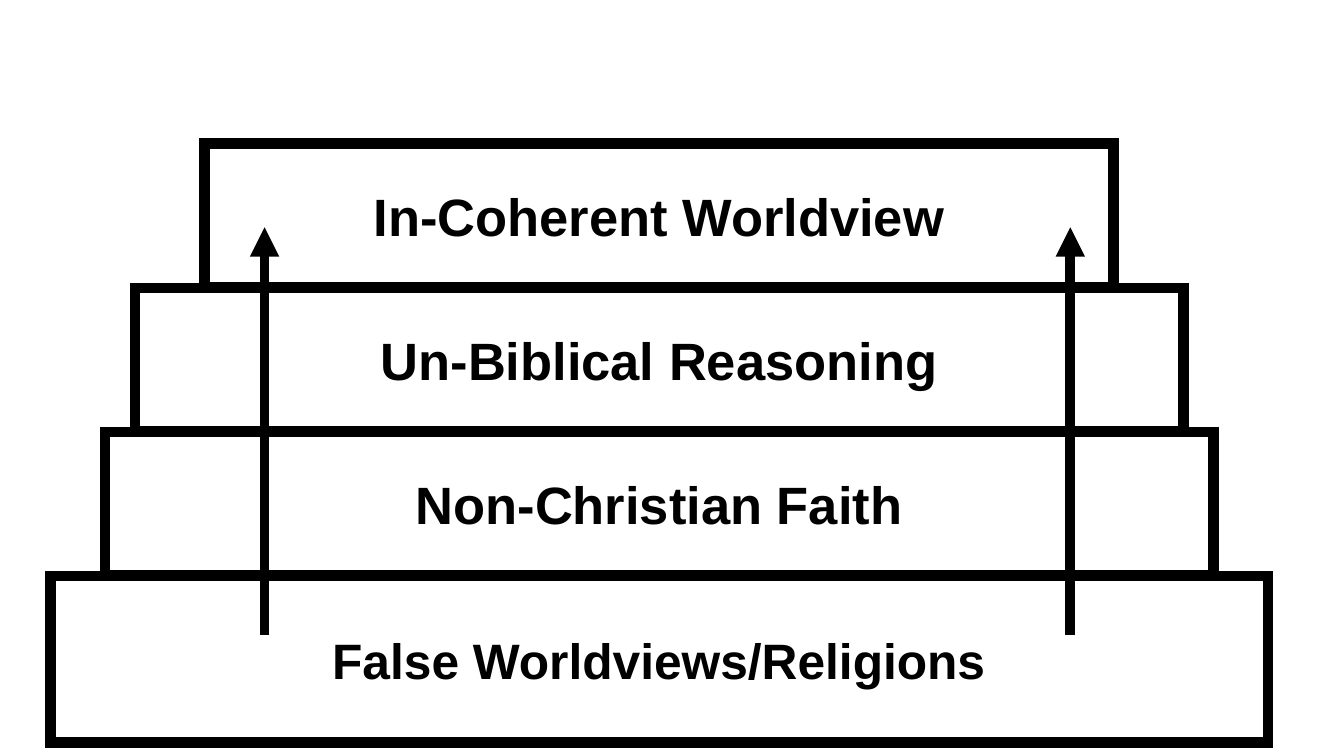
import pptx
import pptx.dml.color
import pptx.enum.shapes
import pptx.enum.text
import pptx.oxml.ns
import pptx.util
from lxml import etree
from pptx.util import Inches

BLACK = pptx.dml.color.RGBColor(0x00, 0x00, 0x00)
FONT = "Arial"
TIER_PITCH = 2.86
TIER_HEIGHT = 2.85
BASE_HEIGHT = 3.3
TIERS = [
    ("In-Coherent Worldview", 18.04, TIER_HEIGHT, 75),
    ("Un-Biblical Reasoning", 20.81, TIER_HEIGHT, 75),
    ("Non-Christian Faith", 22, TIER_HEIGHT, 75),
    ("False Worldviews/Religions", 24.16, BASE_HEIGHT, 71),
]
ARROW_OFFSETS = (4.25, 20.24)
ARROW_TOP = 1.66
ARROW_BOTTOM = 9.74


def add_xml(parent, tag, **attributes):
    return etree.SubElement(parent, pptx.oxml.ns.qn(tag), attributes)


def write_text(shape, text, size, bold=True, color=BLACK):
    frame = shape.text_frame
    frame.word_wrap = True
    frame.vertical_anchor = pptx.enum.text.MSO_ANCHOR.MIDDLE
    for side in ("left", "top", "right", "bottom"):
        setattr(frame, f"margin_{side}", Inches(0.06))
    para = frame.paragraphs[0]
    para.alignment = pptx.enum.text.PP_ALIGN.CENTER
    span = para.add_run()
    span.text = text
    span.font.name = FONT
    span.font.size = pptx.util.Pt(size)
    span.font.bold = bold
    span.font.color.rgb = color


def style_line(line, width):
    line.color.rgb = BLACK
    line.width = pptx.util.Pt(width)


def add_tier(page, left, top, width, height, text, size):
    box = page.shapes.add_shape(
        pptx.enum.shapes.MSO_SHAPE.RECTANGLE,
        Inches(left), Inches(top), Inches(width), Inches(height))
    box.shadow.inherit = False
    box.fill.background()
    style_line(box.line, 15)
    add_xml(box.line._get_or_add_ln(), "a:miter", lim="800000")
    write_text(box, text, size)


def add_up_arrow(page, x, bottom, top):
    arrow = page.shapes.add_connector(
        pptx.enum.shapes.MSO_CONNECTOR.STRAIGHT,
        Inches(x), Inches(bottom), Inches(x), Inches(top))
    style_line(arrow.line, 14)
    add_xml(arrow.line._get_or_add_ln(), "a:tailEnd", type="triangle")
    add_xml(arrow._element.spPr, "a:effectLst")


def add_pyramid(page, left, top, width):
    for level, (text, tier_width, height, size) in reversed(list(enumerate(TIERS))):
        tier_left = left + (width - tier_width) / 2
        add_tier(page, tier_left, top + level * TIER_PITCH, tier_width, height, text, size)
    for offset in ARROW_OFFSETS:
        add_up_arrow(page, left + offset, top + ARROW_BOTTOM, top + ARROW_TOP)


def main():
    deck = pptx.Presentation()
    deck.slide_width = Inches(26.67)
    deck.slide_height = Inches(15)
    page = deck.slides.add_slide(deck.slide_layouts[6])
    add_pyramid(page, left=1, top=2.85, width=24.16)
    deck.save("out.pptx")


if __name__ == "__main__":
    main()
